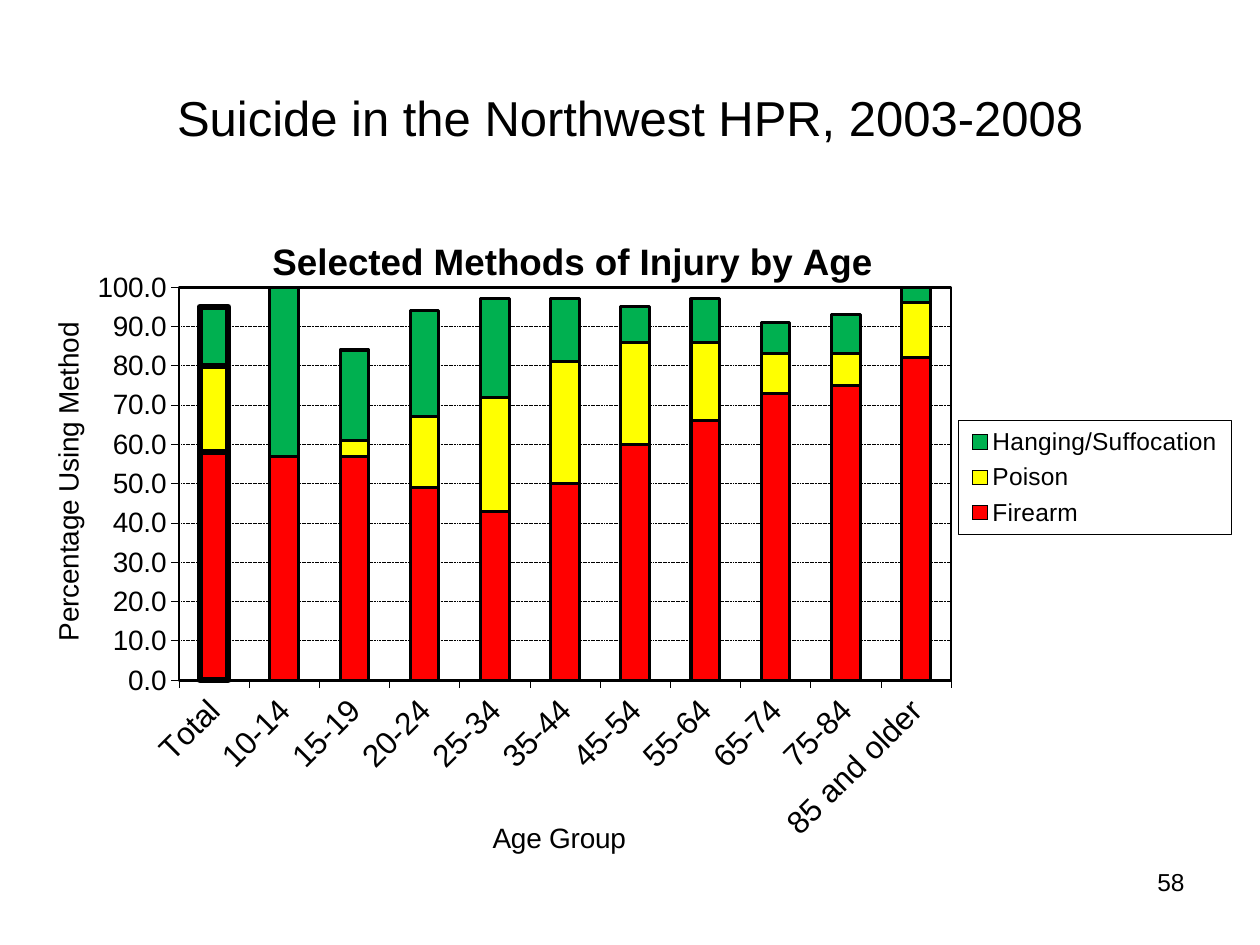
from dataclasses import dataclass

from lxml.etree import SubElement
from pptx import Presentation
from pptx.chart.data import CategoryChartData
from pptx.dml.color import RGBColor
from pptx.enum.chart import XL_CHART_TYPE, XL_LEGEND_POSITION, XL_TICK_MARK
from pptx.enum.dml import MSO_LINE
from pptx.enum.text import MSO_ANCHOR, PP_ALIGN
from pptx.oxml import parse_xml
from pptx.oxml.ns import nsdecls, qn
from pptx.util import Inches, Pt


@dataclass(frozen=True)
class Theme:
    font: str = "Arial"
    ink: RGBColor = RGBColor(0, 0, 0)
    heading: int = 28
    chart_title: int = 21
    age_labels: int = 18
    axis: int = 16
    small: int = 14
    hairline: float = 0.38
    frame: float = 1.5
    bar_line: float = 1.75
    total_line: float = 3.5


@dataclass(frozen=True)
class Area:
    left: float
    top: float
    width: float
    height: float

    def lengths(self) -> tuple:
        return tuple(Inches(v) for v in (self.left, self.top, self.width, self.height))


@dataclass(frozen=True)
class Method:
    name: str
    color: str
    percentages: tuple


THEME = Theme()
CHART_AREA = Area(0.21, 1.58, 9.58, 5.53)
AGES = ("Total", "10-14", "15-19", "20-24", "25-34", "35-44",
        "45-54", "55-64", "65-74", "75-84", "85 and older")
METHODS = (
    Method("Firearm", "FF0000", (58, 57, 57, 49, 43, 50, 60, 66, 73, 75, 82)),
    Method("Poison", "FFFF00", (22, 0, 4, 18, 29, 31, 26, 20, 10, 8, 14)),
    Method("Hanging/Suffocation", "00B050", (15, 43, 23, 27, 25, 16, 9, 11, 8, 10, 4)),
)


def style_font(font, size: int, bold: bool = False) -> None:
    font.name = THEME.font
    font.size = Pt(size)
    font.bold = bold
    font.color.rgb = THEME.ink


def style_line(line, width: float) -> None:
    line.color.rgb = THEME.ink
    line.width = Pt(width)


def add_text(slide, area: Area, text: str, size: int, align, anchor) -> None:
    frame = slide.shapes.add_textbox(*area.lengths()).text_frame
    frame.word_wrap = True
    frame.vertical_anchor = anchor
    paragraph = frame.paragraphs[0]
    paragraph.alignment = align
    run = paragraph.add_run()
    run.text = text
    style_font(run.font, size)


def manual_layout(left: float, top: float, width: float = 0, height: float = 0,
                  inner: bool = False):
    layout = parse_xml(f"<c:layout {nsdecls('c')}><c:manualLayout/></c:layout>")
    settings = [("layoutTarget", "inner")] if inner else []
    settings += [("xMode", "edge"), ("yMode", "edge"),
                 ("x", left / CHART_AREA.width), ("y", top / CHART_AREA.height)]
    if width:
        settings += [("w", width / CHART_AREA.width), ("h", height / CHART_AREA.height)]
    for tag, value in settings:
        SubElement(layout[0], qn(f"c:{tag}")).set("val", str(value))
    return layout


def place(element, layout) -> None:
    for old in element.findall(qn("c:layout")):
        element.remove(old)
    element.find(qn("c:overlay")).addprevious(layout)


def outline(width: float):
    return parse_xml(
        f"<c:spPr {nsdecls('c', 'a')}><a:noFill/><a:ln w=\"{Pt(width)}\"><a:solidFill>"
        f"<a:srgbClr val=\"{THEME.ink}\"/></a:solidFill></a:ln></c:spPr>")


def add_title(owner, text: str, size: int, left: float, top: float,
              bold: bool = False) -> None:
    owner.has_title = True
    title = owner.chart_title if hasattr(owner, "chart_title") else owner.axis_title
    run = title.text_frame.paragraphs[0].add_run()
    run.text = text
    style_font(run.font, size, bold)
    place(title._element, manual_layout(left, top))


def style_axis(axis, size: int) -> None:
    axis.major_tick_mark = XL_TICK_MARK.OUTSIDE
    axis.minor_tick_mark = XL_TICK_MARK.NONE
    style_font(axis.tick_labels.font, size)
    style_line(axis.format.line, THEME.hairline)


def style_axes(chart) -> None:
    ages, percent = chart.category_axis, chart.value_axis
    style_axis(ages, THEME.age_labels)
    ages._element.find(qn("c:txPr")).find(qn("a:bodyPr")).set("rot", str(-45 * 60000))
    add_title(ages, "Age Group", THEME.axis, 3.66, 4.89)

    style_axis(percent, THEME.axis)
    percent.minimum_scale, percent.maximum_scale, percent.major_unit = 0, 100, 10
    percent.tick_labels.number_format = "0.0"
    percent.tick_labels.number_format_is_linked = False
    percent.has_major_gridlines = True
    grid = percent.major_gridlines.format.line
    style_line(grid, THEME.hairline)
    grid.dash_style = MSO_LINE.SQUARE_DOT
    add_title(percent, "Percentage Using Method", THEME.axis, 0.15, 0.94)


def style_bars(plot) -> None:
    plot.gap_width = 145
    plot.overlap = 100
    plot.vary_by_categories = False
    for series, method in zip(plot.series, METHODS):
        for part, width in ((series, THEME.bar_line), (series.points[0], THEME.total_line)):
            part.format.fill.solid()
            part.format.fill.fore_color.rgb = RGBColor.from_string(method.color)
            style_line(part.format.line, width)


def add_legend(chart) -> None:
    chart.has_legend = True
    legend = chart.legend
    legend.position = XL_LEGEND_POSITION.RIGHT
    legend.include_in_layout = False
    style_font(legend.font, THEME.small)
    place(legend._element, manual_layout(7.4, 1.76, 2.16, 0.9))
    legend._element.find(qn("c:txPr")).addprevious(outline(THEME.hairline))


def add_methods_chart(slide) -> None:
    data = CategoryChartData(number_format="0.0")
    data.categories = AGES
    for method in METHODS:
        data.add_series(method.name, method.percentages)
    chart = slide.shapes.add_chart(
        XL_CHART_TYPE.COLUMN_STACKED, *CHART_AREA.lengths(), data).chart
    style_font(chart.font, THEME.axis)
    add_title(chart, "Selected Methods of Injury by Age", THEME.chart_title, 1.9, 0.26, True)
    style_axes(chart)
    style_bars(chart.plots[0])
    add_legend(chart)

    plot_area = chart._chartSpace.chart.plotArea
    for old in plot_area.findall(qn("c:layout")):
        plot_area.remove(old)
    plot_area.insert(0, manual_layout(1.21, 0.7, 6.13, 3.12, inner=True))
    plot_area.append(outline(THEME.frame))


def main() -> None:
    deck = Presentation()
    deck.slide_width, deck.slide_height = Inches(10), Inches(7.5)
    slide = deck.slides.add_slide(deck.slide_layouts[6])
    add_text(slide, Area(7.17, 6.83, 2.33, 0.52), "58", THEME.small,
             PP_ALIGN.RIGHT, MSO_ANCHOR.TOP)
    add_text(slide, Area(0.5, 0.3, 9, 1.25), "Suicide in the Northwest HPR, 2003-2008",
             THEME.heading, PP_ALIGN.CENTER, MSO_ANCHOR.MIDDLE)
    add_methods_chart(slide)
    deck.save("out.pptx")


if __name__ == "__main__":
    main()
